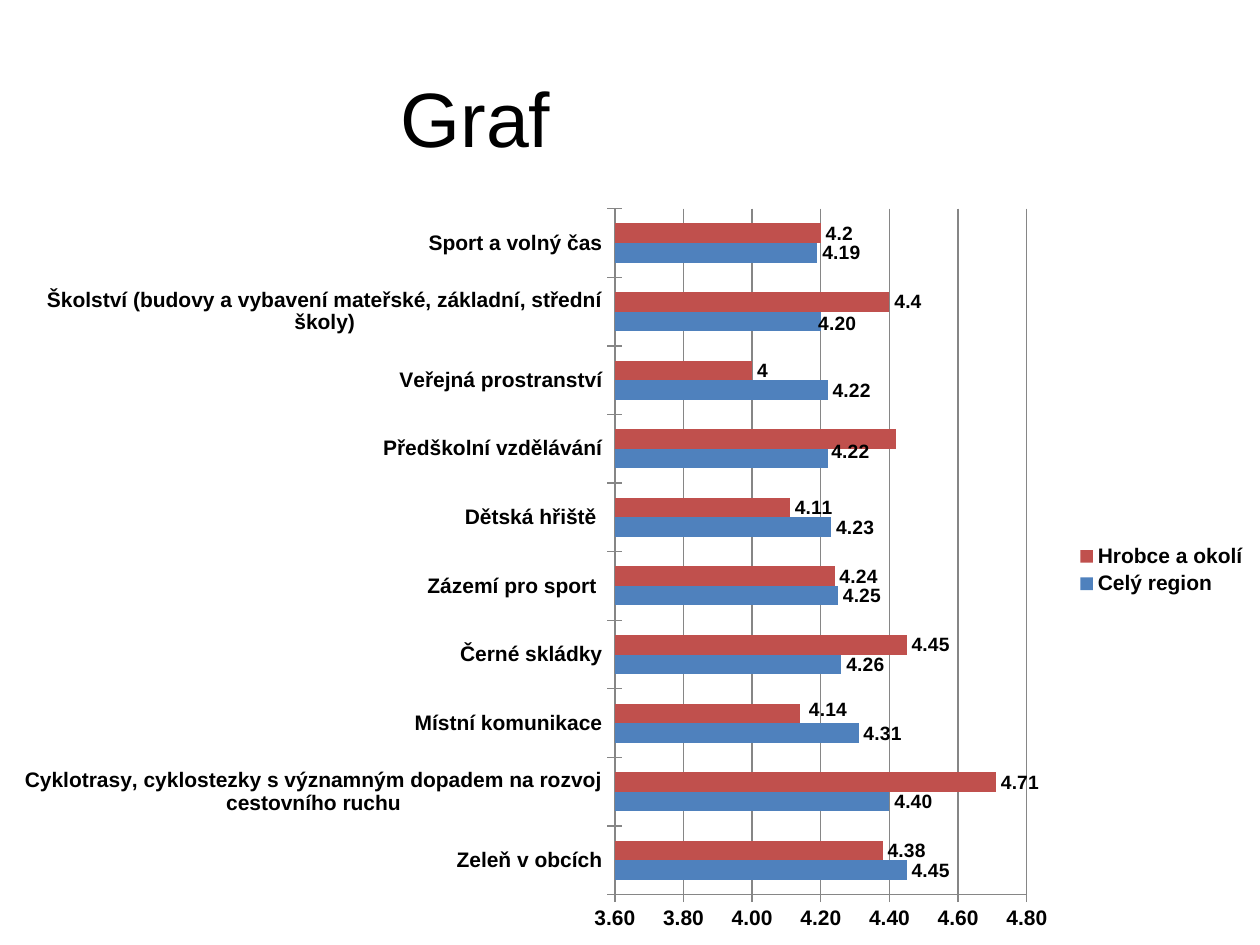
"""Build a slide with a bar chart comparing ratings of the area and the whole region."""
from pptx import Presentation
from pptx.chart.data import CategoryChartData
from pptx.dml.color import RGBColor
from pptx.enum.chart import XL_CHART_TYPE, XL_LABEL_POSITION, XL_LEGEND_POSITION, XL_TICK_MARK
from pptx.enum.text import MSO_ANCHOR, PP_ALIGN
from pptx.oxml import parse_xml
from pptx.oxml.ns import nsdecls
from pptx.util import Inches, Pt

COLORS = {"text": "000000", "region": "4F81BD", "area": "C0504D", "grid": "868686"}
FONT = "Arial"


def style(font, size, bold=None):
    font.name, font.size, font.bold = FONT, Pt(size), bold
    font.color.rgb = RGBColor.from_string(COLORS["text"])


def paint(line):
    line.color.rgb = RGBColor.from_string(COLORS["grid"])
    line.width = Pt(0.75)


def_rows = [
    ("Zeleň v obcích", 4.45, 4.38),
    ("Cyklotrasy, cyklostezky s významným dopadem na rozvoj cestovního ruchu", 4.4, 4.71),
    ("Místní komunikace", 4.31, 4.14),
    ("Černé skládky", 4.26, 4.45),
    ("Zázemí pro sport ", 4.25, 4.24),
    ("Dětská hřiště ", 4.23, 4.11),
    ("Předškolní vzdělávání", 4.22, 4.42),
    ("Veřejná prostranství", 4.22, 4),
    ("Školství (budovy a vybavení mateřské, základní, střední školy)", 4.2, 4.4),
    ("Sport a volný čas", 4.19, 4.2),
]
names, region, area = zip(*def_rows)

deck = Presentation()
deck.slide_width, deck.slide_height = Inches(10), Inches(7.5)
slide = deck.slides.add_slide(deck.slide_layouts[5])

title = slide.shapes.title
title.left, title.top = Inches(0.5), Inches(0.3)
title.width, title.height = Inches(6.55), Inches(1.25)
title.text_frame.text = "Graf"
title.text_frame.vertical_anchor = MSO_ANCHOR.MIDDLE
head = title.text_frame.paragraphs[0]
head.alignment = PP_ALIGN.CENTER
style(head.font, 44)

data = CategoryChartData()
data.categories = names
data.add_series("Celý region", region)
data.add_series("Hrobce a okolí", area)
chart = slide.shapes.add_chart(
    XL_CHART_TYPE.BAR_CLUSTERED, Inches(0), Inches(1.55), Inches(10), Inches(5.95), data
).chart
style(chart.font, 18)
chart.has_title = False
chart.has_legend = True
chart.legend.position = XL_LEGEND_POSITION.RIGHT
chart.legend.include_in_layout = False
style(chart.legend.font, 12, True)

for axis in (chart.category_axis, chart.value_axis):
    axis.major_tick_mark = XL_TICK_MARK.CROSS
    style(axis.tick_labels.font, 12, True)
    paint(axis.format.line)
scale = chart.value_axis
scale.minimum_scale, scale.maximum_scale, scale.major_unit = 3.6, 4.8, 0.2
scale.has_major_gridlines = True
paint(scale.major_gridlines.format.line)
scale.tick_labels.number_format = "#,##0.00"
scale.tick_labels.number_format_is_linked = False

plot = chart.plots[0]
plot.gap_width, plot.overlap, plot.vary_by_categories = 150, 0, False
looks = [
    ("region", "#,##0.00", {6: (-0.001, -0.01), 8: (-0.006, 0.003)}),
    ("area", "General", {2: (0.003, -0.006)}),
]
for bars, (key, form, moves) in zip(plot.series, looks):
    bars.format.fill.solid()
    bars.format.fill.fore_color.rgb = RGBColor.from_string(COLORS[key])
    bars.invert_if_negative = False
    labels = bars.data_labels
    labels.show_value = True
    labels.number_format, labels.number_format_is_linked = form, False
    labels.position = XL_LABEL_POSITION.OUTSIDE_END
    style(labels.font, 11, True)
    for spot, (x, y) in moves.items():
        label = bars.points[spot].data_label
        style(label.font, 11, True)
        label.position = XL_LABEL_POSITION.OUTSIDE_END
        node = labels._element.xpath(f"c:dLbl[c:idx/@val='{spot}']")[0]
        node.insert(1, parse_xml(
            f'<c:layout {nsdecls("c")}><c:manualLayout><c:x val="{x}"/><c:y val="{y}"/>'
            "</c:manualLayout></c:layout>"))
        node.insert(2, parse_xml(
            f'<c:numFmt {nsdecls("c")} formatCode="{form}" sourceLinked="0"/>'))

last = labels._element.xpath("c:dLbl")[-1]
last.addnext(parse_xml(
    f'<c:dLbl {nsdecls("c")}><c:idx val="6"/><c:delete val="1"/></c:dLbl>'))

area_xml = chart._chartSpace.chart.plotArea
for old in area_xml.xpath("c:layout"):
    area_xml.remove(old)
frame = {"x": 0.488, "y": 0.018, "w": 0.327, "h": 0.915}
sizes = "".join(f'<c:{side} val="{part}"/>' for side, part in frame.items())
area_xml.insert(0, parse_xml(
    f'<c:layout {nsdecls("c")}><c:manualLayout><c:layoutTarget val="inner"/>'
    f'<c:xMode val="edge"/><c:yMode val="edge"/>{sizes}</c:manualLayout></c:layout>'))

deck.save("out.pptx")
